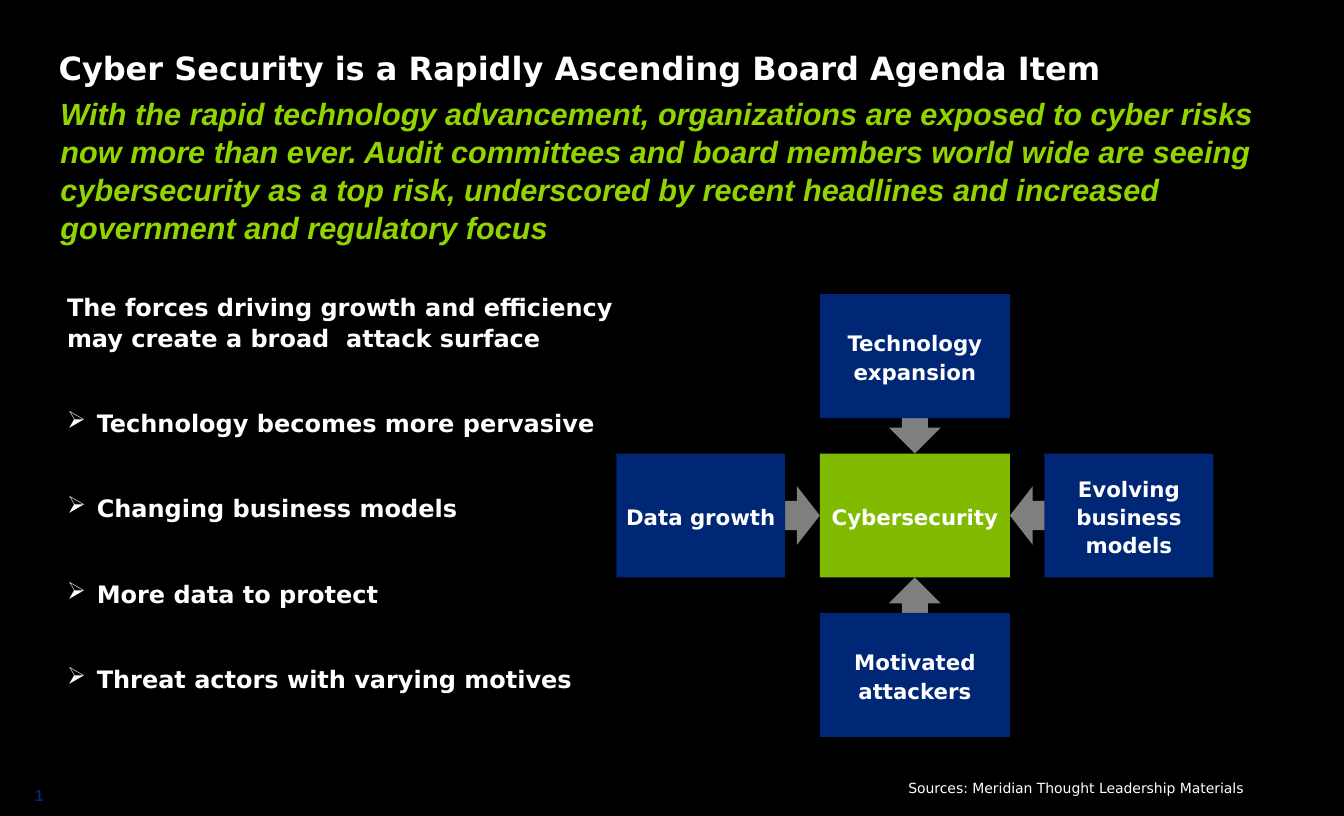
"""Build the board agenda slide on cyber security with its driving forces diagram."""
from dataclasses import dataclass

from lxml import etree
from pptx import Presentation
from pptx.dml.color import RGBColor
from pptx.enum.shapes import MSO_SHAPE
from pptx.enum.text import MSO_ANCHOR, PP_ALIGN
from pptx.oxml.ns import qn
from pptx.util import Inches, Pt

RECTANGLE = MSO_SHAPE.RECTANGLE
UP, DOWN = MSO_SHAPE.UP_ARROW, MSO_SHAPE.DOWN_ARROW
LEFT, RIGHT = MSO_SHAPE.LEFT_ARROW, MSO_SHAPE.RIGHT_ARROW
TOP, MIDDLE, BOTTOM = MSO_ANCHOR.TOP, MSO_ANCHOR.MIDDLE, MSO_ANCHOR.BOTTOM
ALIGN_LEFT, ALIGN_CENTER = PP_ALIGN.LEFT, PP_ALIGN.CENTER

BLACK = RGBColor(0x00, 0x00, 0x00)
WHITE = RGBColor(0xFF, 0xFF, 0xFF)
NAVY = RGBColor(0x00, 0x27, 0x76)
GREEN = RGBColor(0x81, 0xBB, 0x00)
LIME = RGBColor(0x92, 0xD4, 0x00)
GRAY = RGBColor(0x7F, 0x7F, 0x7F)

SLIDE_COLUMNS, SLIDE_ROWS = 14, 8.5
GRID_UNIT = Inches(1)
CENTER_COLUMN, CENTER_ROW = 9.53, 5.37
COLUMN_PITCH, ROW_PITCH = 2.23, 1.66
CENTER_WIDTH, SIDE_WIDTH, BOX_HEIGHT = 1.98, 1.76, 1.29
BULLET_INDENT = 0.31


@dataclass(frozen=True)
class Style:
    """Font settings of a text."""
    size: float
    color: RGBColor = WHITE
    font: str = "DejaVu Sans"
    bold: bool = True
    italic: bool = False


@dataclass(frozen=True)
class TextBlock:
    """A text box placed in grid columns and rows."""
    text: str
    left: float
    top: float
    width: float
    height: float
    style: Style
    anchor: MSO_ANCHOR = TOP
    align: PP_ALIGN = ALIGN_LEFT
    inset: bool = False
    spacing: float | Pt = 1.0


@dataclass(frozen=True)
class Force:
    """A diagram box, stepped from the center, with its inward arrow."""
    label: str
    column: int
    row: int
    arrow: MSO_SHAPE


BOX_STYLE = Style(16)
LIST_STYLE = Style(18)
TEXT_BLOCKS = (
    TextBlock("1", 0.36, 8.18, 0.41, 0.2, Style(12, NAVY, "Arial"), BOTTOM),
    TextBlock("With the rapid technology advancement, organizations are exposed to cyber risks "
              "now more than ever. Audit committees and board members world wide are seeing "
              "cybersecurity as a top risk, underscored by recent headlines and increased "
              "government and regulatory focus",
              0.63, 0.97, 12.75, 1.55, Style(23, LIME, "Arial", italic=True), spacing=1.04),
    TextBlock("Sources: Meridian Thought Leadership Materials", 8.7, 8.07, 5.02, 0.28,
              Style(10.5, bold=False), align=ALIGN_CENTER, inset=True),
    TextBlock("Cyber Security is a Rapidly Ascending Board Agenda Item",
              0.61, 0.48, 12.75, 0.42, Style(24), BOTTOM, spacing=Pt(33.4)),
)
FORCES = (
    Force("Technology expansion", 0, -1, DOWN),
    Force("Evolving business models", 1, 0, LEFT),
    Force("Data growth", -1, 0, RIGHT),
    Force("Motivated attackers", 0, 1, UP),
)
HEADING = "The forces driving growth and efficiency may create a broad  attack surface"
DRIVERS = (
    "Technology becomes more pervasive",
    "Changing business models",
    "More data to protect",
    "Threat actors with varying motives",
)


def grid(*lengths: float) -> list[int]:
    """Turn grid columns and rows into slide lengths."""
    return [round(length * GRID_UNIT) for length in lengths]


def style_paragraph(para, style: Style, align: PP_ALIGN, spacing: float | Pt) -> None:
    """Format a paragraph and its runs."""
    para.alignment = align
    para.line_spacing = spacing
    for span in para.runs:
        span.font.name = style.font
        span.font.size = Pt(style.size)
        span.font.bold = style.bold
        span.font.italic = style.italic
        span.font.color.rgb = style.color


def clear_margins(frame) -> None:
    """Remove all insets from a text frame."""
    frame.margin_left = frame.margin_right = frame.margin_top = frame.margin_bottom = 0


def add_text(page, block: TextBlock) -> None:
    """Draw one text block."""
    box = page.shapes.add_textbox(*grid(block.left, block.top, block.width, block.height))
    frame = box.text_frame
    frame.word_wrap = True
    frame.vertical_anchor = block.anchor
    if not block.inset:
        clear_margins(frame)
    frame.text = block.text
    style_paragraph(frame.paragraphs[0], block.style, block.align, block.spacing)


def add_centered(page, kind: MSO_SHAPE, column: float, row: float,
                 width: float, height: float, color: RGBColor):
    """Draw a plain shape around a center point."""
    shape = page.shapes.add_shape(
        kind, *grid(column - width / 2, row - height / 2, width, height))
    shape.shadow.inherit = False
    shape.fill.solid()
    shape.fill.fore_color.rgb = color
    shape.line.fill.background()
    return shape


def add_box(page, label: str, column: int, row: int, color: RGBColor) -> None:
    """Draw a labelled diagram box."""
    width = SIDE_WIDTH if column else CENTER_WIDTH
    box = add_centered(page, RECTANGLE, CENTER_COLUMN + column * COLUMN_PITCH,
                       CENTER_ROW + row * ROW_PITCH, width, BOX_HEIGHT, color)
    frame = box.text_frame
    frame.word_wrap = True
    frame.vertical_anchor = MIDDLE
    clear_margins(frame)
    frame.text = label
    style_paragraph(frame.paragraphs[0], BOX_STYLE, ALIGN_CENTER, Pt(21.3))


def add_arrow(page, force: Force) -> None:
    """Draw the arrow from a force to the center box."""
    width, height = (0.44, 0.61) if force.column else (0.54, 0.5)
    column = CENTER_COLUMN + force.column * (CENTER_WIDTH + width) / 2
    row = CENTER_ROW + force.row * (BOX_HEIGHT + height) / 2
    arrow = add_centered(page, force.arrow, column, row, width, height, GRAY)
    arrow.adjustments[1] = 0.54


def add_bullet(para) -> None:
    """Give a paragraph a hanging arrowhead bullet."""
    properties = para._p.get_or_add_pPr()
    indent, = grid(BULLET_INDENT)
    properties.set("marL", str(indent))
    properties.set("indent", str(-indent))
    etree.SubElement(properties, qn("a:buChar")).set("char", "➢")


def add_drivers(page) -> None:
    """Draw the heading and the bulleted drivers."""
    box = page.shapes.add_textbox(*grid(0.6, 2.97, 7, 5.15))
    frame = box.text_frame
    frame.word_wrap = True
    frame.margin_right, = grid(1)
    frame.text = "\n".join((HEADING, *DRIVERS))
    for para in frame.paragraphs:
        style_paragraph(para, LIST_STYLE, ALIGN_LEFT, 1.08)
        para.space_after = Pt(40.7)
    for para in frame.paragraphs[1:]:
        add_bullet(para)


def main() -> None:
    """Build and save the deck."""
    deck = Presentation()
    deck.slide_width, deck.slide_height = grid(SLIDE_COLUMNS, SLIDE_ROWS)
    page = deck.slides.add_slide(deck.slide_layouts[6])
    page.background.fill.solid()
    page.background.fill.fore_color.rgb = BLACK
    for block in TEXT_BLOCKS:
        add_text(page, block)
    add_box(page, "Cybersecurity", 0, 0, GREEN)
    for force in FORCES:
        add_arrow(page, force)
        add_box(page, force.label, force.column, force.row, NAVY)
    add_drivers(page)
    deck.save("out.pptx")


if __name__ == "__main__":
    main()
